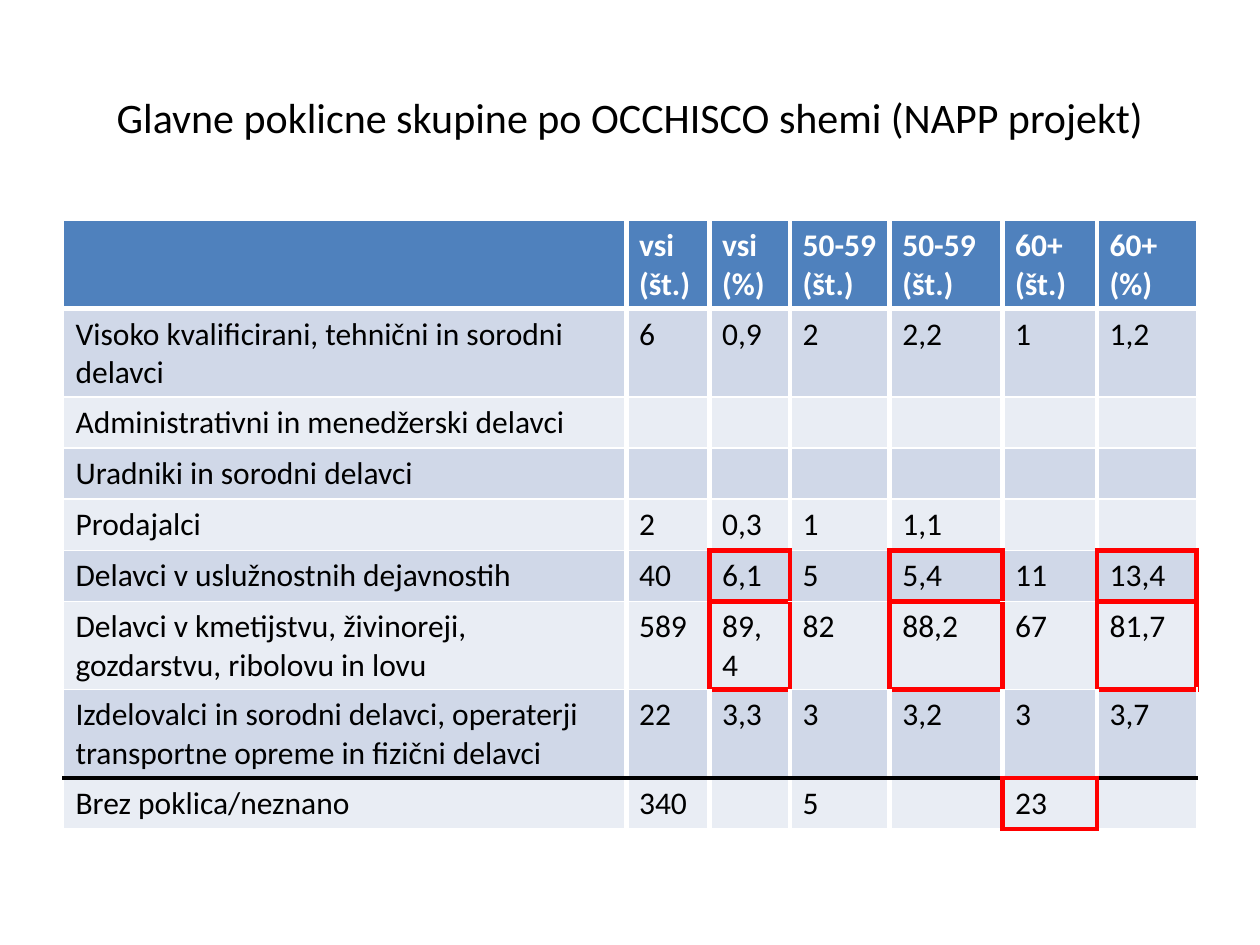
from lxml import etree
from pptx import Presentation
from pptx.dml.color import RGBColor
from pptx.enum import text
from pptx.oxml import ns
from pptx.util import Pt

FONT = "Calibri"
COLORS = {"head": "4F81BD", "odd": "D0D8E8", "even": "E9EDF4",
          "white": "FFFFFF", "black": "000000", "red": "FF0000"}
WIDTHS = [322, 47.5, 46, 57, 64.5, 54, 57]
ROW_HEIGHT = 29.2
ROWS = [
    ["", "vsi (št.)", "vsi (%)", "50-59 (št.)", "50-59 (št.)", "60+ (št.)", "60+ (%)"],
    ["Visoko kvalificirani, tehnični in sorodni delavci",
     "6", "0,9", "2", "2,2", "1", "1,2"],
    ["Administrativni in menedžerski delavci"] + [""] * 6,
    ["Uradniki in sorodni delavci"] + [""] * 6,
    ["Prodajalci", "2", "0,3", "1", "1,1", "", ""],
    ["Delavci v uslužnostnih dejavnostih", "40", "6,1", "5", "5,4", "11", "13,4"],
    ["Delavci v kmetijstvu, živinoreji, gozdarstvu, ribolovu in lovu",
     "589", "89,4", "82", "88,2", "67", "81,7"],
    ["Izdelovalci in sorodni delavci, operaterji transportne opreme in fizični delavci",
     "22", "3,3", "3", "3,2", "3", "3,7"],
    ["Brez poklica/neznano", "340", "", "5", "", "23", ""],
]
LAST = len(ROWS) - 1
MARKED = {(row, col) for row in (5, 6) for col in (2, 4, 6)} | {(LAST, 5)}
SIDES = {"lnL": (0, -1), "lnR": (0, 1), "lnT": (-1, 0), "lnB": (1, 0)}


def color(name):
    return RGBColor.from_string(COLORS[name])


def style(para, size, ink, bold=False):
    font = para.font
    font.name, font.size, font.bold = FONT, Pt(size), bold
    font.color.rgb = color(ink)


def edge(here, there):
    """Return colour and width of the line between two neighbouring cells."""
    if MARKED & {here, there}:
        return "red", 3
    rows = {here[0], there[0]}
    if rows == {LAST - 1, LAST}:
        return "black", 3
    inner = 0 <= there[1] < len(WIDTHS)
    thick = rows == {0, 1} or (len(rows) == 1 and inner)
    return "white", 3 if thick else 1


def add_borders(cell, row, col):
    props = cell._tc.get_or_add_tcPr()
    for place, (tag, (down, right)) in enumerate(SIDES.items()):
        name, width = edge((row, col), (row + down, col + right))
        line = etree.Element(ns.qn("a:" + tag), w=str(Pt(width)))
        fill = etree.SubElement(line, ns.qn("a:solidFill"))
        etree.SubElement(fill, ns.qn("a:srgbClr"), val=COLORS[name])
        props.insert(place, line)


def add_title(slide, left, top, width, height):
    box = slide.shapes.add_textbox(Pt(left), Pt(top), Pt(width), Pt(height))
    frame = box.text_frame
    frame.word_wrap = True
    frame.vertical_anchor = text.MSO_ANCHOR.MIDDLE
    para = frame.paragraphs[0]
    para.text = "Glavne poklicne skupine po OCCHISCO shemi (NAPP projekt)"
    para.alignment = text.PP_ALIGN.CENTER
    style(para, 24, "black")


def add_groups(slide, left, top):
    """Add the table of occupational groups."""
    table = slide.shapes.add_table(
        len(ROWS), len(WIDTHS), Pt(left), Pt(top),
        Pt(sum(WIDTHS)), Pt(ROW_HEIGHT * len(ROWS))).table
    for column, width in zip(table.columns, WIDTHS):
        column.width = Pt(width)
    for row, values in enumerate(ROWS):
        table.rows[row].height = Pt(ROW_HEIGHT)
        head = row == 0
        fill = "head" if head else "odd" if row % 2 else "even"
        for col, value in enumerate(values):
            cell = table.cell(row, col)
            cell.text = value
            style(cell.text_frame.paragraphs[0], 18, "white" if head else "black", head)
            cell.fill.solid()
            cell.fill.fore_color.rgb = color(fill)
            add_borders(cell, row, col)


def main():
    deck = Presentation()
    deck.slide_width, deck.slide_height = Pt(720), Pt(540)
    slide = deck.slides.add_slide(deck.slide_layouts[6])
    add_title(slide, 36, 21.6, 648, 90)
    add_groups(slide, 36, 126)
    deck.save("out.pptx")


if __name__ == "__main__":
    main()
